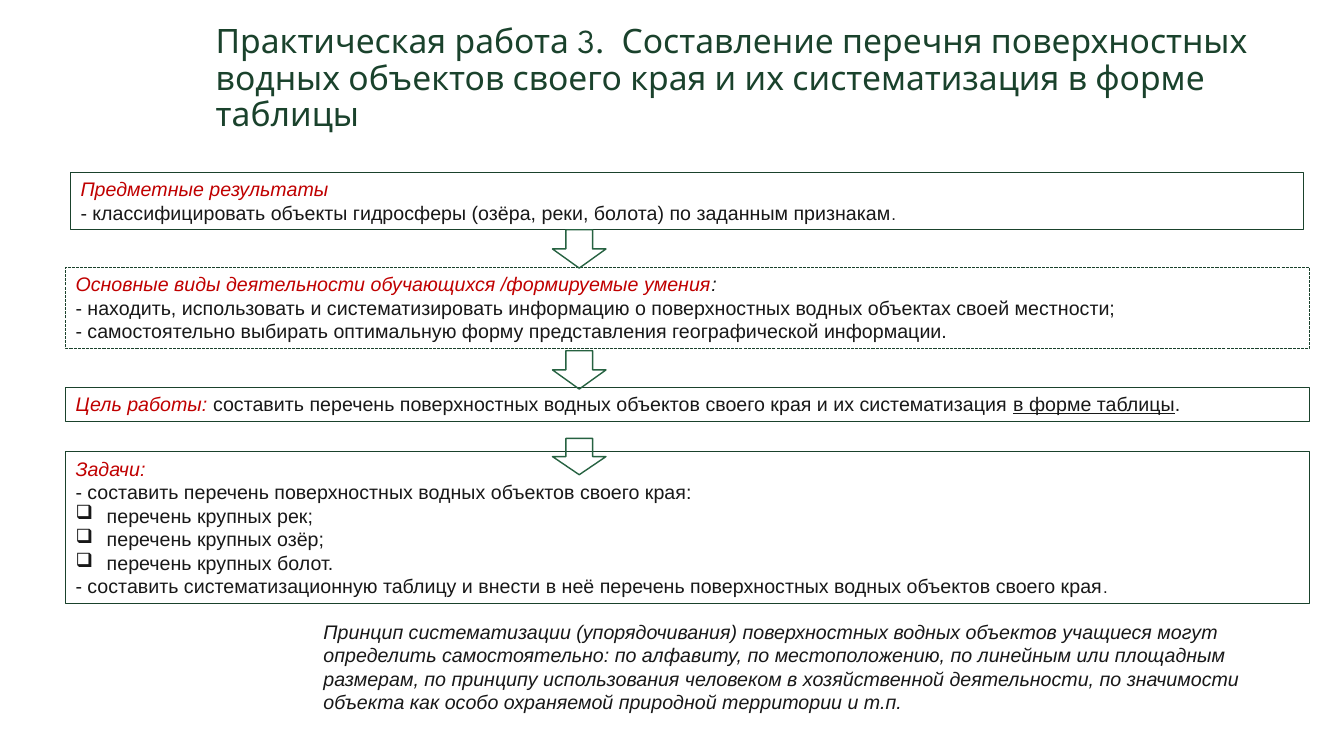
"""Build a slide that sets out a practical task on surface waters."""
from lxml import etree
from pptx import Presentation
from pptx import util as u
from pptx.dml.color import RGBColor
from pptx.enum import dml, shapes, text
from pptx.oxml.ns import qn

WIDE, HIGH = u.Inches(13.33), u.Inches(7.5)
DARK, GREEN, RED, INK = "1A422C", "266241", "C00000", "181818"
HEAD = {"hue": RED, "slant": True}
SLANT = {"slant": True}
UNDER = {"under": True}
SMALL = {"size": 12}

BOXES = [
    ((5.25, 22.8, 91.75, 7.6), False, [
        [("Предметные результаты", HEAD)],
        [("- классифицировать объекты гидросферы (озёра, реки, болота) по заданным признакам", {}),
         (".", SMALL)],
    ]),
    ((4.88, 35.33, 92.57, 10.8), True, [
        [("Основные виды деятельности обучающихся /формируемые умения", HEAD), (":", SLANT)],
        [("- находить, использовать и систематизировать информацию о поверхностных "
          "водных объектах своей местности;", {})],
        [("- самостоятельно выбирать оптимальную форму представления географической информации.", {})],
    ]),
    ((4.88, 51.2, 92.57, 4.53), False, [
        [("Цель работы: ", HEAD),
         ("составить перечень поверхностных водных объектов своего края и их систематизация ", {}),
         ("в форме таблицы", UNDER), (".", {})],
    ]),
    ((4.88, 59.73, 92.57, 20.13), False, [
        [("Задачи:", HEAD)],
        [("- составить перечень поверхностных водных объектов своего края:", {})],
        "перечень крупных рек;",
        "перечень крупных озёр;",
        "перечень крупных болот.",
        [("- составить систематизационную таблицу и внести в неё перечень поверхностных "
          "водных объектов своего края", {}), (".", SMALL)],
    ]),
]
ARROWS = [(30.4, 5.07), (46.4, 5.07), (58, 4.8)]
TITLE = ("Практическая работа 3.  Составление перечня поверхностных водных объектов "
         "своего края и их систематизация в форме таблицы")
NOTE = ("Принцип систематизации (упорядочивания) поверхностных водных объектов учащиеся могут "
        "определить самостоятельно: по алфавиту, по местоположению, по линейным или площадным "
        "размерам, по принципу использования человеком в хозяйственной деятельности, "
        "по значимости объекта как особо охраняемой природной территории и т.п.")


def paint(color, hue):
    """Give a colour format its hex value."""
    color.rgb = RGBColor.from_string(hue)


def place(left, top, width, height):
    """Turn percentages of the slide into lengths."""
    return [round(part * side / 100) for part, side in
            zip((left, top, width, height), (WIDE, HIGH, WIDE, HIGH))]


def add_run(para, words, size=14, hue=INK, face="Arial", slant=False, under=False):
    """Add one styled run to a paragraph."""
    run = para.add_run()
    run.text = words
    font = run.font
    font.size, font.name, font.italic, font.underline = u.Pt(size), face, slant, under
    paint(font.color, hue)


def add_mark(para):
    """Give a paragraph a square bullet with a hanging indent."""
    props = para._p.get_or_add_pPr()
    step = u.Inches(0.31)
    props.set("marL", str(step))
    props.set("indent", str(-step))
    etree.SubElement(props, qn("a:buChar")).set("char", "❑")


def fill_text(frame, paras):
    """Write paragraphs, where a plain string stands for a bullet item."""
    frame.word_wrap = True
    frame.auto_size = text.MSO_AUTO_SIZE.SHAPE_TO_FIT_TEXT
    frame.vertical_anchor = text.MSO_ANCHOR.TOP
    for rank, runs in enumerate(paras):
        para = frame.add_paragraph() if rank else frame.paragraphs[0]
        para.alignment = text.PP_ALIGN.LEFT
        if isinstance(runs, str):
            add_mark(para)
            runs = [(runs, {})]
        for words, style in runs:
            add_run(para, words, **style)


def add_form(slide, kind, spot, hue, width):
    """Add an unfilled outlined shape."""
    form = slide.shapes.add_shape(kind, *place(*spot))
    form.shadow.inherit = False
    form.fill.background()
    paint(form.line.color, hue)
    form.line.width = u.Pt(width)
    return form


def add_box(slide, spot, dashed, paras):
    """Add a framed text block."""
    box = add_form(slide, shapes.MSO_SHAPE.RECTANGLE, spot, DARK, 0.75)
    if dashed:
        box.line.dash_style = dml.MSO_LINE.SQUARE_DOT
    fill_text(box.text_frame, paras)


def set_title(slide):
    """Move and format the title placeholder."""
    title = slide.shapes.title
    title.left, title.top, title.width, title.height = place(15.3, 0.8, 81.7, 19.33)
    frame = title.text_frame
    frame.word_wrap = True
    frame.auto_size = text.MSO_AUTO_SIZE.NONE
    frame.vertical_anchor = text.MSO_ANCHOR.MIDDLE
    para = frame.paragraphs[0]
    para.alignment = text.PP_ALIGN.LEFT
    para.line_spacing = 0.9
    add_run(para, TITLE, size=24, hue=DARK, face="League Spartan")


def main():
    """Build and save the slide."""
    deck = Presentation()
    deck.slide_width, deck.slide_height = WIDE, HIGH
    slide = deck.slides.add_slide(deck.slide_layouts.get_by_name("Title Only"))
    set_title(slide)
    for spot, dashed, paras in BOXES:
        add_box(slide, spot, dashed, paras)
    for top, height in ARROWS:
        add_form(slide, shapes.MSO_SHAPE.DOWN_ARROW, (41.11, top, 3.98, height), GREEN, 1)
    note = slide.shapes.add_textbox(*place(23.33, 81.33, 73.67, 13.87))
    fill_text(note.text_frame, [[(NOTE, SLANT)]])
    deck.save("out.pptx")


if __name__ == "__main__":
    main()
